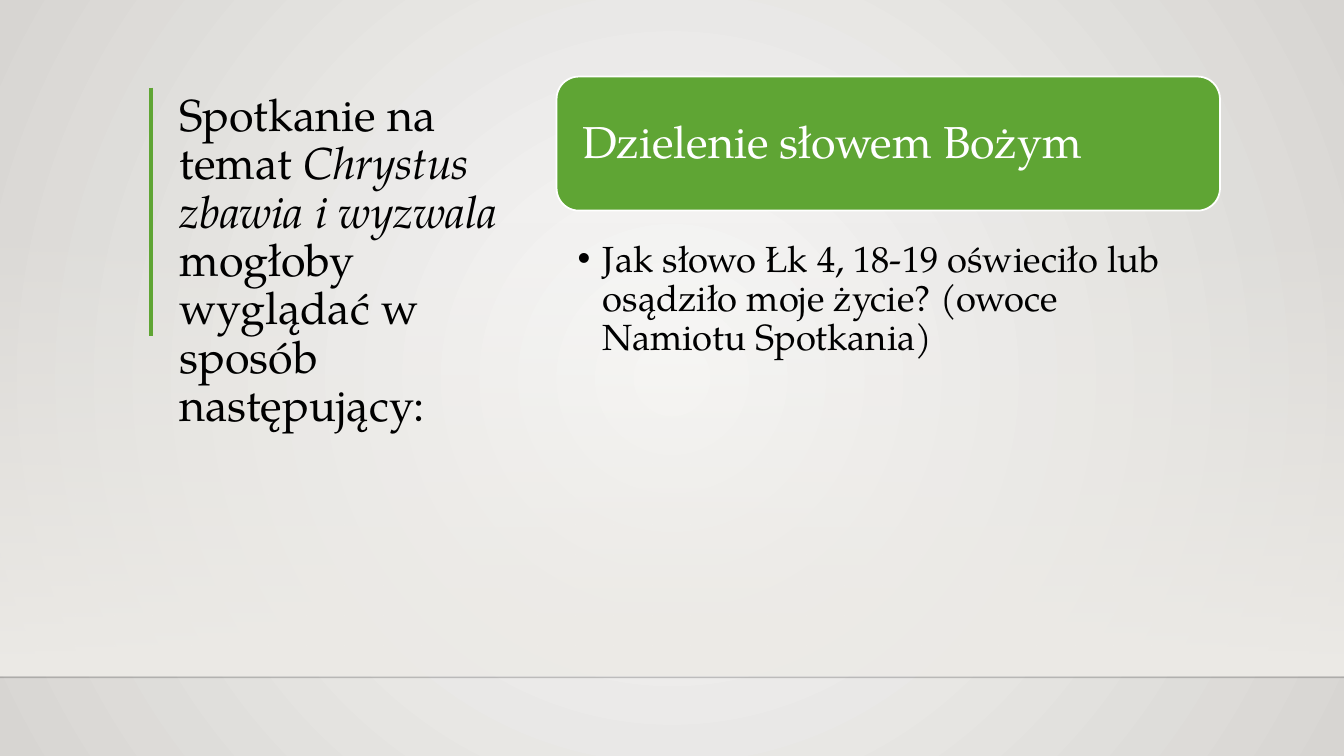
from dataclasses import dataclass

from lxml.etree import SubElement
from pptx import Presentation
from pptx.dml.color import RGBColor as Color
from pptx.enum.shapes import MSO_CONNECTOR as Connector, MSO_SHAPE as Shape
from pptx.enum.text import MSO_ANCHOR as Anchor, MSO_AUTO_SIZE as AutoSize, PP_ALIGN as Align
from pptx.oxml.ns import qn
from pptx.util import Inches, Pt


@dataclass(frozen=True)
class Theme:
    font: str = "TeX Gyre Pagella"
    ink: str = "000000"
    white: str = "FFFFFF"
    accent: str = "5FA534"
    center: str = "FAFAF9"
    edge: str = "D7D5D2"
    haze: str = "EDEBE7"
    horizon: str = "000001"
    heading_size: int = 32
    list_size: int = 26


def color(value):
    return Color.from_string(value)


def set_alpha(color_parent, percent):
    SubElement(color_parent.find(".//" + qn("a:srgbClr")), qn("a:alpha"), val=str(percent * 1000))


class SlideBuilder:
    def __init__(self, deck, theme):
        self.theme = theme
        self.page = deck.slides.add_slide(deck.slide_layouts[1])

    def gradient(self, fill, start, end):
        fill.gradient()
        for stop, value in zip(fill.gradient_stops, (start, end)):
            stop.color.rgb = color(value)

    def background(self):
        self.gradient(self.page.background.fill, self.theme.center, self.theme.edge)
        gradient = self.page.element.find(".//" + qn("a:gradFill"))
        gradient.remove(gradient.find(qn("a:lin")))
        circle = SubElement(gradient, qn("a:path"), path="circle")
        SubElement(circle, qn("a:fillToRect"), l="50000", t="50000", r="50000", b="50000")

    def box(self, shape, left, top, width, height):
        box = self.page.shapes.add_shape(
            shape, Inches(left), Inches(top), Inches(width), Inches(height))
        box.shadow.inherit = False
        return box

    def haze(self, left, top, width, height):
        box = self.box(Shape.RECTANGLE, left, top, width, height)
        box.line.fill.background()
        self.gradient(box.fill, self.theme.haze, self.theme.haze)
        box.fill.gradient_angle = 270
        set_alpha(box.element.spPr.find(".//" + qn("a:gs")), 0)

    def line(self, x1, y1, x2, y2, value, width, alpha=100):
        line = self.page.shapes.add_connector(
            Connector.STRAIGHT, Inches(x1), Inches(y1), Inches(x2), Inches(y2))
        line.line.color.rgb = color(value)
        line.line.width = Pt(width)
        if alpha < 100:
            set_alpha(line.element.spPr, alpha)
        SubElement(line.element.spPr, qn("a:effectLst"))

    def text(self, box, runs, size, value, anchor, insets, space_after=0, bullet=False):
        frame = box.text_frame
        frame.word_wrap = True
        frame.auto_size = AutoSize.NONE
        frame.vertical_anchor = anchor
        frame.margin_left, frame.margin_top, frame.margin_right, frame.margin_bottom = map(
            Inches, insets)
        para = frame.paragraphs[0]
        if bullet:
            properties = para._p.get_or_add_pPr()
            properties.set("marL", str(Inches(0.25)))
            properties.set("indent", str(-Inches(0.25)))
            SubElement(properties, qn("a:buChar"), char="•")
        para.alignment = Align.LEFT
        para.line_spacing = 0.9
        para.space_before = Pt(0)
        para.space_after = Pt(space_after)
        for content, italic in runs:
            span = para.add_run()
            span.text = content
            span.font.name = self.theme.font
            span.font.size = Pt(size)
            span.font.italic = italic
            span.font.color.rgb = color(value)

    def placeholder(self, index, left, top, width, height):
        box = self.page.placeholders[index]
        box.left, box.top, box.width, box.height = map(Inches, (left, top, width, height))
        box.element.getparent().append(box.element)
        return box

    def title(self, runs, *place):
        self.text(self.placeholder(0, *place), runs, self.theme.heading_size, self.theme.ink,
                  Anchor.BOTTOM, (0.1, 0.05, 0.1, 0.05))

    def banner(self, content, *place):
        box = self.box(Shape.ROUNDED_RECTANGLE, *place)
        box.fill.solid()
        box.fill.fore_color.rgb = color(self.theme.accent)
        box.line.color.rgb = color(self.theme.white)
        box.line.width = Pt(1.25)
        self.text(box, [(content, False)], self.theme.heading_size, self.theme.white,
                  Anchor.MIDDLE, (0.19, 0.13, 0.19, 0.13))

    def bullet_list(self, content, *place):
        self.text(self.placeholder(1, *place), [(content, False)], self.theme.list_size,
                  self.theme.ink, Anchor.TOP, (0.21, 0.04, 0.2, 0.04), 5, True)


def main():
    deck = Presentation()
    deck.slide_width, deck.slide_height = Inches(13.33), Inches(7.5)
    theme = Theme()
    slide = SlideBuilder(deck, theme)
    slide.background()
    slide.haze(0, 2.2, 13.33, 4.5)
    slide.line(0, 6.72, 13.33, 6.72, theme.horizon, 1, 20)
    slide.line(1.5, 0.87, 1.5, 3.33, theme.accent, 3)
    slide.title([
        ("Spotkanie na temat ", False),
        ("Chrystus zbawia i wyzwala", True),
        (" mogłoby wyglądać w sposób następujący:", False),
    ], 1.68, 0.87, 3.48, 3.46)
    slide.banner("Dzielenie słowem Bożym", 5.52, 0.76, 6.58, 1.33)
    slide.bullet_list(
        "Jak słowo Łk 4, 18-19 oświeciło lub osądziło moje życie? (owoce Namiotu Spotkania)",
        5.52, 2.35, 6.58, 1.4)
    deck.save("out.pptx")


if __name__ == "__main__":
    main()
